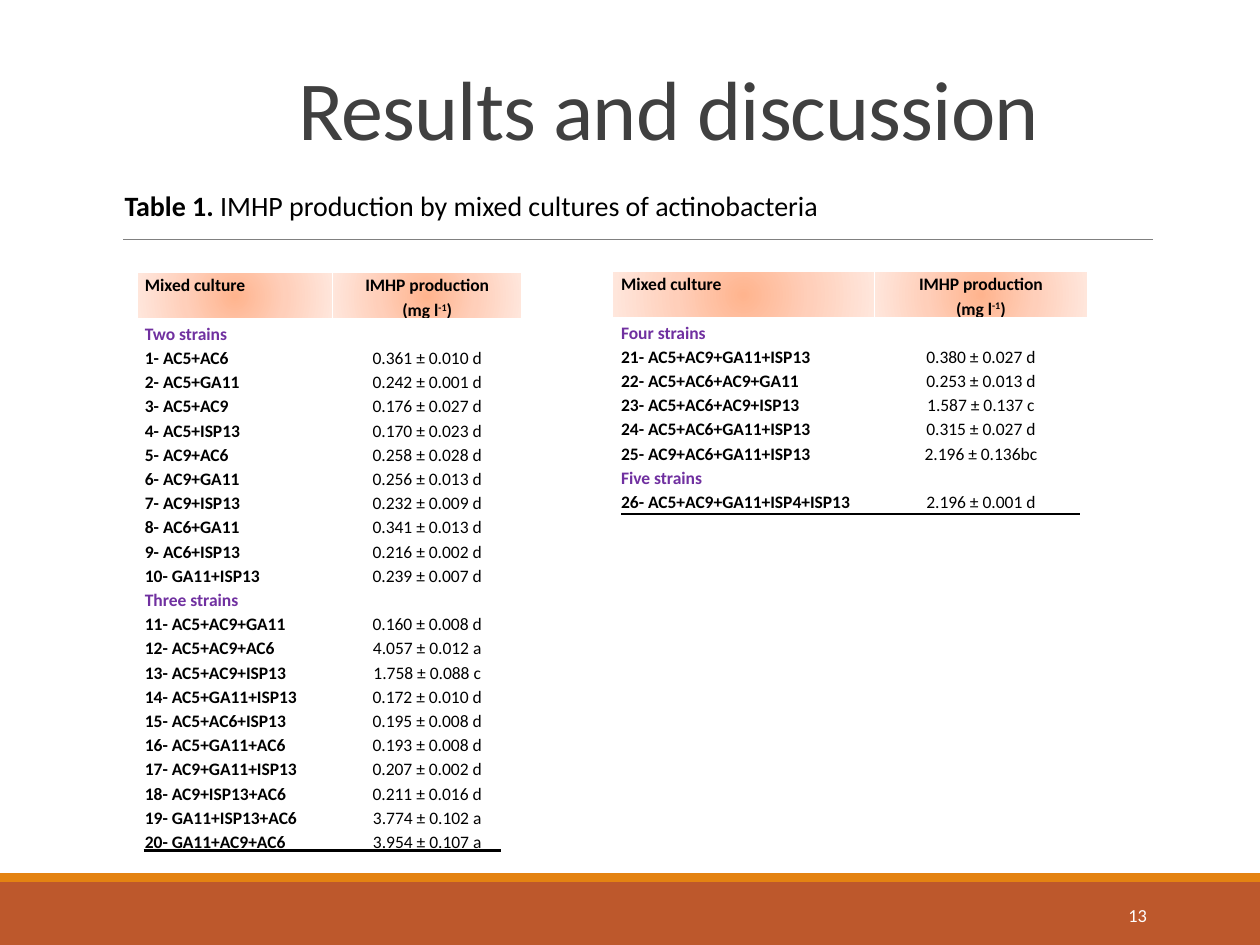
"""Build the results slide with two tables of mixed cultures."""
import lxml.etree
import pptx
import pptx.dml.color
import pptx.enum.shapes
import pptx.enum.text
import pptx.oxml
import pptx.oxml.ns
import pptx.util

Inches = pptx.util.Inches
Pt = pptx.util.Pt
RGBColor = pptx.dml.color.RGBColor
ALIGN = pptx.enum.text.PP_ALIGN
ANCHOR = pptx.enum.text.MSO_ANCHOR
qn = pptx.oxml.ns.qn

FONT = "Calibri"
RUST = RGBColor(0xBD, 0x58, 0x2C)
AMBER = RGBColor(0xE4, 0x83, 0x12)
GRAY = RGBColor(0x80, 0x80, 0x80)
DARK = RGBColor(0x40, 0x40, 0x40)
BLACK = RGBColor(0, 0, 0)
WHITE = RGBColor(0xFF, 0xFF, 0xFF)
PURPLE = RGBColor(0x70, 0x30, 0xA0)
PEACH = ((0, RGBColor(0xFF, 0xB4, 0x8E)), (50, RGBColor(0xFF, 0xCF, 0xBA)),
         (100, RGBColor(0xFF, 0xE7, 0xDD)))

LEFT = [
    ("Two strains", ""),
    ("1- AC5+AC6", "0.361 ± 0.010 d"),
    ("2- AC5+GA11", "0.242 ± 0.001 d"),
    ("3- AC5+AC9", "0.176 ± 0.027 d"),
    ("4- AC5+ISP13", "0.170 ± 0.023 d"),
    ("5- AC9+AC6", "0.258 ± 0.028 d"),
    ("6- AC9+GA11", "0.256 ± 0.013 d"),
    ("7- AC9+ISP13", "0.232 ± 0.009 d"),
    ("8- AC6+GA11", "0.341 ± 0.013 d"),
    ("9- AC6+ISP13", "0.216 ± 0.002 d"),
    ("10- GA11+ISP13", "0.239 ± 0.007 d"),
    ("Three strains", ""),
    ("11- AC5+AC9+GA11", "0.160 ± 0.008 d"),
    ("12- AC5+AC9+AC6", "4.057 ± 0.012 a"),
    ("13- AC5+AC9+ISP13", "1.758 ± 0.088 c"),
    ("14- AC5+GA11+ISP13", "0.172 ± 0.010 d"),
    ("15- AC5+AC6+ISP13", "0.195 ± 0.008 d"),
    ("16- AC5+GA11+AC6", "0.193 ± 0.008 d"),
    ("17- AC9+GA11+ISP13", "0.207 ± 0.002 d"),
    ("18- AC9+ISP13+AC6", "0.211 ± 0.016 d"),
    ("19- GA11+ISP13+AC6", "3.774 ± 0.102 a"),
    ("20- GA11+AC9+AC6", "3.954 ± 0.107 a"),
]
RIGHT = [
    ("Four strains", ""),
    ("21- AC5+AC9+GA11+ISP13", "0.380 ± 0.027 d"),
    ("22- AC5+AC6+AC9+GA11", "0.253 ± 0.013 d"),
    ("23- AC5+AC6+AC9+ISP13", "1.587 ± 0.137 c"),
    ("24- AC5+AC6+GA11+ISP13", "0.315 ± 0.027 d"),
    ("25- AC9+AC6+GA11+ISP13", "2.196 ± 0.136bc"),
    ("Five strains", ""),
    ("26- AC5+AC9+GA11+ISP4+ISP13", "2.196 ± 0.001 d"),
]


def style(run, size, color, bold=False):
    font = run.font
    font.name, font.size, font.bold = FONT, Pt(size), bold
    font.color.rgb = color


def add_band(slide, top, height, color):
    kind = pptx.enum.shapes.MSO_SHAPE.RECTANGLE
    band = slide.shapes.add_shape(kind, 0, Inches(top), Inches(10), Inches(height))
    band.shadow.inherit = False
    band.fill.solid()
    band.fill.fore_color.rgb = color
    band.line.fill.background()


def add_rule(slide, left, right, top, color, width):
    kind = pptx.enum.shapes.MSO_CONNECTOR.STRAIGHT
    rule = slide.shapes.add_connector(
        kind, Inches(left), Inches(top), Inches(right), Inches(top))
    rule.line.color.rgb = color
    rule.line.width = Pt(width)
    lxml.etree.SubElement(rule._element.spPr, qn("a:effectLst"))


def add_title(slide, text):
    title = slide.shapes.title
    title.left, title.top = Inches(2.27), Inches(0.37)
    title.width, title.height = Inches(6.16), Inches(0.93)
    frame = title.text_frame
    frame.text = text
    frame.auto_size = pptx.enum.text.MSO_AUTO_SIZE.NONE
    frame.vertical_anchor = ANCHOR.BOTTOM
    para = frame.paragraphs[0]
    para.alignment, para.line_spacing = ALIGN.LEFT, 0.85
    style(para.runs[0], 48, DARK)
    para.runs[0].font._element.set("spc", "-50")


def add_text(slide, box, parts, size, color, align=ALIGN.LEFT, anchor=ANCHOR.TOP):
    frame = slide.shapes.add_textbox(*map(Inches, box)).text_frame
    frame.word_wrap = True
    frame.vertical_anchor = anchor
    para = frame.paragraphs[0]
    para.alignment = align
    for text, bold in parts:
        run = para.add_run()
        run.text = text
        style(run, size, color, bold)


def add_edge(cell, side, width):
    edge = lxml.etree.SubElement(
        cell._tc.get_or_add_tcPr(), qn("a:ln" + side), w=str(Pt(width)))
    fill = lxml.etree.SubElement(edge, qn("a:solidFill"))
    lxml.etree.SubElement(fill, qn("a:srgbClr"), val=str(WHITE))


def add_glow(cell):
    props = cell._tc.get_or_add_tcPr()
    grad = lxml.etree.SubElement(props, qn("a:gradFill"), rotWithShape="1")
    stops = lxml.etree.SubElement(grad, qn("a:gsLst"))
    for place, color in PEACH:
        stop = lxml.etree.SubElement(stops, qn("a:gs"), pos=str(place * 1000))
        lxml.etree.SubElement(stop, qn("a:srgbClr"), val=str(color))
    shade = lxml.etree.SubElement(grad, qn("a:path"))
    shade.set("path", "circle")
    sides = dict.fromkeys("ltrb", "50000")
    lxml.etree.SubElement(shade, qn("a:fillToRect"), **sides)


def fill_cell(cell, text, inset, align, color, bold, head=False):
    cell.margin_left = cell.margin_right = Inches(inset)
    cell.margin_top = cell.margin_bottom = 0
    for side in "LRTB" if head else "LRB":
        add_edge(cell, side, 3 if head and side == "B" else 1)
    if head:
        add_glow(cell)
    else:
        cell.fill.background()
    cell.text_frame.text = text
    for para in cell.text_frame.paragraphs:
        para.alignment, para.line_spacing = align, 1.15
        for run in para.runs:
            style(run, 10, color, bold)
        if not text:
            lxml.etree.SubElement(para._p, qn("a:endParaRPr"), sz="1000")


def add_unit(cell):
    para = cell.text_frame.paragraphs[1]
    for text, base in (("-1", "30000"), (")", "0")):
        run = para.add_run()
        run.text = text
        style(run, 10, BLACK, True)
        run.font._element.set("baseline", base)


def add_grid(slide, left, top, widths, inset, rows):
    pitch = 0.19
    frame = slide.shapes.add_table(
        len(rows) + 1, 2, Inches(left), Inches(top),
        Inches(sum(widths)), Inches(pitch * (len(rows) + 2)))
    table = frame.table
    table.first_row = table.horz_banding = False
    for col, width in zip(table.columns, widths):
        col.width = Inches(width)
    for row in table.rows:
        row.height = Inches(pitch)
    table.rows[0].height = Inches(2 * pitch)
    fill_cell(table.cell(0, 0), "Mixed culture", inset, ALIGN.LEFT, BLACK, True, True)
    fill_cell(table.cell(0, 1), "IMHP production\n(mg l", inset,
              ALIGN.CENTER, BLACK, True, True)
    add_unit(table.cell(0, 1))
    for num, (name, value) in enumerate(rows, 1):
        color = BLACK if value else PURPLE
        fill_cell(table.cell(num, 0), name, inset, ALIGN.LEFT, color, True)
        fill_cell(table.cell(num, 1), value, inset, ALIGN.CENTER, BLACK, False)


def main():
    deck = pptx.Presentation()
    deck.slide_width, deck.slide_height = Inches(10), Inches(7.5)
    slide = deck.slides.add_slide(deck.slide_layouts[5])
    add_band(slide, 7, 0.5, RUST)
    add_band(slide, 6.93, 0.07, AMBER)
    add_rule(slide, 0.98, 9.15, 1.9, GRAY, 0.5)
    add_text(slide, (8.12, 7.06, 1.08, 0.4), [("13", False)], 10.5, WHITE,
             ALIGN.RIGHT, ANCHOR.MIDDLE)
    add_title(slide, "Results and discussion")
    add_text(slide, (0.89, 1.45, 5.94, 0.37), [
        ("Table 1. ", True),
        ("IMHP production by mixed cultures of actinobacteria", False)], 16, BLACK)
    add_grid(slide, 1.09, 2.16, (1.55, 1.5), 0.06, LEFT)
    add_grid(slide, 4.86, 2.15, (2.08, 1.69), 0.07, RIGHT)
    add_rule(slide, 1.14, 3.98, 6.75, BLACK, 1.25)
    add_rule(slide, 4.93, 8.57, 4.08, BLACK, 1.25)
    deck.save("out.pptx")


if __name__ == "__main__":
    main()
